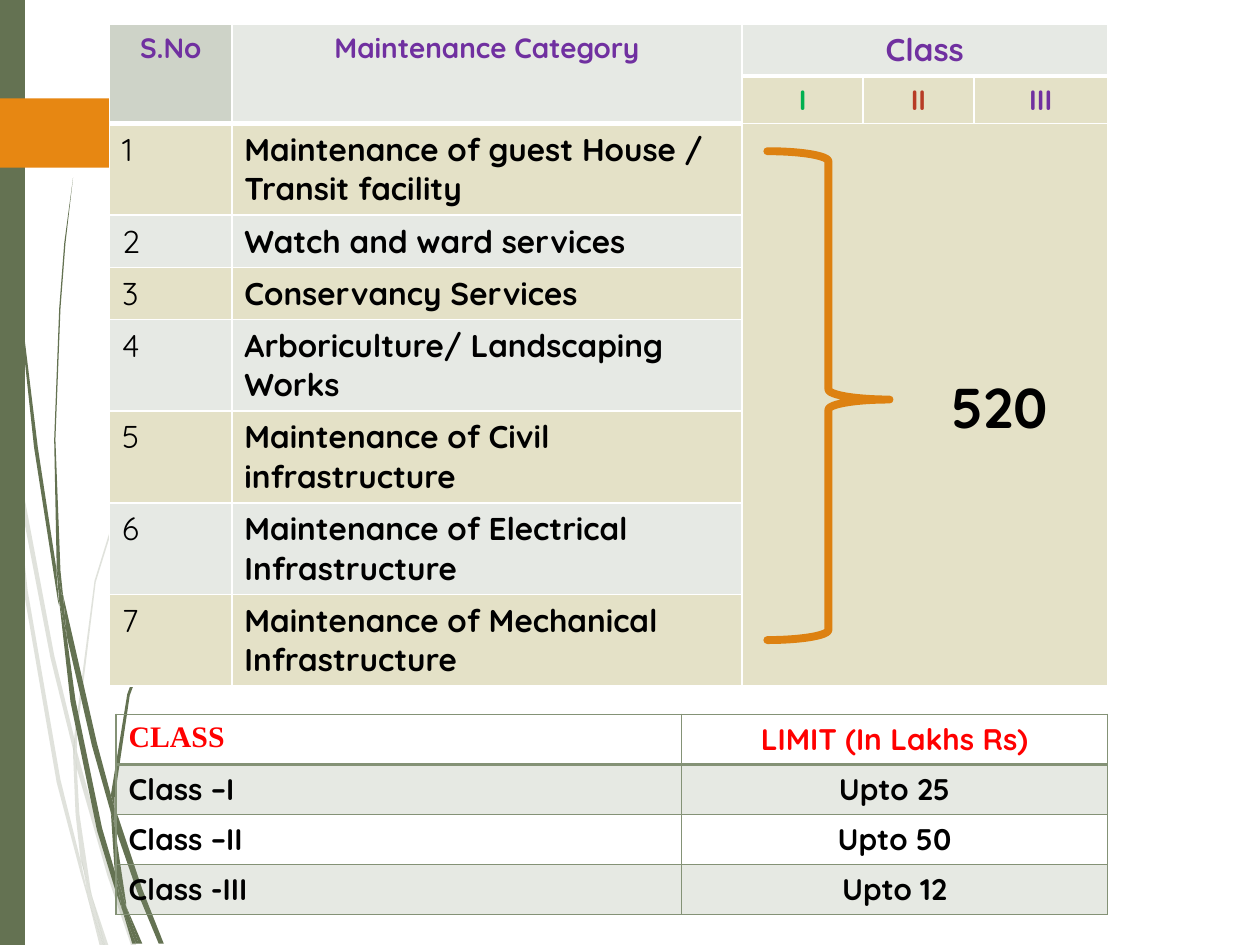
import pptx
import pptx.util
import pptx.dml.color
import pptx.enum.shapes
import pptx.enum.text
import pptx.oxml
import pptx.oxml.ns
from pptx.util import Inches

COLORS = {
    "olive": "647252", "orange": "E78712", "brace": "DD8111", "white": "FFFFFF",
    "header": "E6E9E4", "number": "CED3C8", "sand": "E4E1C7", "sage": "849276",
    "purple": "7030A0", "green": "00B050", "rust": "B73C26", "red": "FF0000",
    "black": "000000",
}
FONT = "Quicksand"
CENTER = pptx.enum.text.PP_ALIGN.CENTER
LEFT = pptx.enum.text.PP_ALIGN.LEFT

# Outlines of the grass blades, in inches from the corner of their box
PALE_BLADES = [
    [(0.08, 3.5), (0.06, 3.22), (0, 2.82), (0, 2.99), (0.07, 3.44)],
    [(0.4, 5.22), (0.59, 5.99), (0.59, 5.86), (0.43, 5.2), (0.1, 3.45), (0.12, 3.76)],
    [(0.64, 6.07), (0.61, 5.96), (0.61, 6.1), (0.85, 6.94), (1.04, 7.5), (1.08, 7.5),
     (0.88, 6.92)],
    [(0.83, 7.5), (0.86, 7.5), (0.73, 7.11)],
    [(0.64, 6.83), (0.48, 6.19), (0.22, 4.69), (0.12, 3.76), (0.08, 3.5), (0.19, 4.7),
     (0.45, 6.21), (0.64, 6.93), (0.7, 7.14), (0.69, 7.07)],
    [(0.58, 5.99), (0.6, 6.46), (0.64, 6.83), (0.67, 6.92), (0.73, 7.11), (0.72, 7.06),
     (0.63, 6.46), (0.61, 6.1), (0.61, 6.08)],
    [(0.61, 5.84), (0.76, 4.62), (1.11, 3.49), (1.59, 2.45), (1.87, 1.98), (2.01, 1.75),
     (2.17, 1.54), (2.17, 1.53), (2.01, 1.75), (1.86, 1.97), (1.58, 2.44), (1.1, 3.48),
     (0.75, 4.61), (0.59, 5.84), (0.59, 5.86), (0.61, 5.96)],
    [(0.7, 7.14), (0.79, 7.5), (0.82, 7.5)],
    [(0.61, 6.08), (0.61, 6.1), (0.61, 5.96), (0.59, 5.86), (0.58, 5.99)],
    [(0.67, 6.92), (0.65, 6.83), (0.69, 7.07), (0.7, 7.14), (0.82, 7.5), (0.83, 7.5),
     (0.73, 7.11)],
]
DARK_BLADES = [
    [(0.05, 1.1), (0.14, 2.33), (0.27, 3.55), (0.46, 4.77), (0.47, 4.81), (0.45, 4.57),
     (0.45, 4.53), (0.3, 3.55), (0.15, 2.32), (0.06, 1.09), (0.04, 0.48), (0.03, 0),
     (0.02, 0), (0.03, 0.48)],
    [(0.73, 5.92), (0.88, 6.45), (0.88, 6.33), (0.88, 6.31), (0.77, 5.9), (0.5, 4.72),
     (0.53, 5.05)],
    [(0.94, 6.49), (0.91, 6.41), (0.91, 6.56), (1.09, 7.08), (1.26, 7.49), (1.3, 7.49),
     (1.13, 7.06)],
    [(0.91, 6.91), (0.81, 6.57), (0.6, 5.56), (0.53, 5.05), (0.47, 4.77), (0.56, 5.57),
     (0.77, 6.59), (0.92, 7.08), (0.97, 7.22), (0.96, 7.17)],
    [(0.5, 4.72), (0.48, 4.53), (0.44, 3.49), (0.48, 2.45), (0.52, 1.93), (0.58, 1.41),
     (0.51, 1.93), (0.47, 2.45), (0.43, 3.49), (0.45, 4.49), (0.49, 4.72)],
    [(1.1, 7.49), (1.13, 7.49), (1, 7.19)],
    [(0.47, 4.77), (0.53, 5.05), (0.5, 4.72), (0.49, 4.72), (0.45, 4.49), (0.45, 4.53)],
    [(0.91, 6.33), (1.03, 5.52), (1.31, 4.76), (1.69, 4.06), (1.91, 3.74), (2.03, 3.59),
     (2.16, 3.44), (2.15, 3.44), (2.03, 3.58), (1.91, 3.73), (1.68, 4.05), (1.29, 4.74),
     (1.01, 5.51), (0.88, 6.31), (0.91, 6.41)],
    [(0.97, 7.22), (1.05, 7.49), (1.08, 7.49)],
    [(0.88, 6.45), (0.91, 6.91), (0.96, 7.06), (1, 7.19), (1, 7.16), (0.91, 6.56),
     (0.9, 6.51)],
    [(0.88, 6.45), (0.9, 6.51), (0.91, 6.56), (0.91, 6.41), (0.88, 6.31)],
    [(0.96, 7.06), (0.91, 6.91), (0.96, 7.17), (0.97, 7.22), (1.08, 7.49), (1.1, 7.49),
     (1, 7.19)],
]
ARROW = [(0, 0), (1.21, 0), (1.24, 0.01), (1.49, 0.26), (1.49, 0.29), (1.24, 0.54),
         (1.21, 0.55), (0, 0.55)]

CATEGORIES = [
    "Maintenance of guest House / Transit facility", "Watch and ward services",
    "Conservancy Services", "Arboriculture/ Landscaping Works",
    "Maintenance of Civil infrastructure", "Maintenance of Electrical Infrastructure",
    "Maintenance of Mechanical Infrastructure",
]
LIMITS = [("Class –I", "Upto 25"), ("Class –II", "Upto 50"), ("Class -III", "Upto 12")]


def rgb(name):
    return pptx.dml.color.RGBColor.from_string(COLORS[name])


def paint(item, name, alpha=None):
    """Fill a shape or cell, with an optional opacity in percent."""
    item.fill.solid()
    item.fill.fore_color.rgb = rgb(name)
    if alpha:
        holder = item._tc if hasattr(item, "_tc") else item.element.spPr
        color = holder.find(".//" + pptx.oxml.ns.qn("a:solidFill") + "[last()]/*") \
            if not hasattr(item, "_tc") else holder.tcPr.find(
                pptx.oxml.ns.qn("a:solidFill") + "/*")
        color.append(pptx.oxml.parse_xml(
            f'<a:alpha {pptx.oxml.ns.nsdecls("a")} val="{alpha * 1000}"/>'))


def write(frame, text, size, color, align=LEFT, bold=True, font=FONT):
    para = frame.paragraphs[0]
    para.text, para.alignment = text, align
    para.font.name, para.font.size, para.font.bold = font, pptx.util.Pt(size), bold
    para.font.color.rgb = rgb(color)


def add_outline(shapes, left, top, points, color, alpha=None):
    spots = [(Inches(left + x), Inches(top + y)) for x, y in points]
    builder = shapes.build_freeform(*spots[0])
    builder.add_line_segments(spots[1:], close=True)
    shape = builder.convert_to_shape()
    shape.shadow.inherit = False
    paint(shape, color, alpha)
    shape.line.fill.background()


def set_borders(cell, color, top=1, bottom=1):
    properties = cell._tc.get_or_add_tcPr()
    for side, width in (("L", 1), ("R", 1), ("T", top), ("B", bottom)):
        properties.append(pptx.oxml.parse_xml(
            f'<a:ln{side} {pptx.oxml.ns.nsdecls("a")} w="{width * 12700}"><a:solidFill>'
            f'<a:srgbClr val="{COLORS[color]}"/></a:solidFill></a:ln{side}>'))


def add_grid(page, left, top, width, height, columns, rows):
    frame = page.shapes.add_table(len(rows), len(columns), Inches(left), Inches(top),
                                  Inches(width), Inches(height))
    table = frame.table
    table.first_row = table.horz_banding = False
    for column, size in zip(table.columns, columns):
        column.width = Inches(size)
    for row, size in zip(table.rows, rows):
        row.height = Inches(size)
    frame.height = Inches(height)
    return table


def add_decoration(page, left, top, height):
    for blades, alpha in ((PALE_BLADES, 20), (DARK_BLADES, None)):
        group = page.shapes.add_group_shape()
        for blade in blades:
            add_outline(group.shapes, left, top, blade, "olive", alpha)
    add_outline(page.shapes, left, top,
                [(0, 0), (0.2, 0), (0.2, height), (0, height)], "olive")
    add_outline(page.shapes, left, top + 0.78, ARROW, "orange")


def add_category_table(page, left, top, width, height):
    table = add_grid(page, left, top, width, height, [0.97, 4.05, 0.96, 0.88, 1.06],
                     [0.37, 0.34, 0.58, 0.34, 0.34, 0.57, 0.57, 0.58, 0.58])
    for first, last in (((0, 0), (1, 0)), ((0, 1), (1, 1)), ((0, 2), (0, 4)),
                        ((2, 2), (8, 4))):
        table.cell(*first).merge(table.cell(*last))
    for row in range(9):
        for column in range(5):
            cell = table.cell(row, column)
            # The heavy rule runs below each heading cell
            heading_end = 1 if column < 2 else 0
            set_borders(cell, "white", 3 if row == heading_end + 1 else 1,
                        3 if row in (0, heading_end) else 1)
            shaded = row % 2 == 0 or column > 1
            paint(cell, "header" if row == 0 or not shaded else "sand")
    paint(table.cell(0, 0), "number")

    # Headings
    for row, column, text, size, color in (
            (0, 0, "S.No", 16, "purple"), (0, 1, "Maintenance Category", 16, "purple"),
            (0, 2, "Class", 18, "purple"), (1, 2, "I", 16, "green"),
            (1, 3, "II", 16, "rust"), (1, 4, "III", 16, "purple")):
        write(table.cell(row, column).text_frame, text, size, color, CENTER)
    # Numbered categories
    for number, category in enumerate(CATEGORIES, 1):
        write(table.cell(number + 1, 0).text_frame, str(number), 18, "black", bold=False)
        write(table.cell(number + 1, 1).text_frame, category, 18, "black")


def add_limit_table(page, left, top, width, height):
    rows = [("CLASS", "LIMIT (In Lakhs Rs)")] + LIMITS
    table = add_grid(page, left, top, width, height, [4.49, 3.38], [0.32] * 4)
    for row, texts in enumerate(rows):
        for column, text in enumerate(texts):
            cell = table.cell(row, column)
            set_borders(cell, "sage", 2 if row == 1 else 1, 2 if row == 0 else 1)
            if row % 2:
                paint(cell, "sage", 20)
            else:
                cell.fill.background()
            write(cell.text_frame, text, 17, "black" if row else "red",
                  CENTER if column else LEFT,
                  font="Times New Roman" if row == column == 0 else FONT)


def add_total(page, left, top):
    brace = page.shapes.add_shape(pptx.enum.shapes.MSO_SHAPE.RIGHT_BRACE, Inches(left),
                                  Inches(top), Inches(0.97), Inches(3.88))
    brace.adjustments[0], brace.adjustments[1] = 0.083, 0.508
    brace.shadow.inherit = False
    brace.fill.background()
    brace.line.color.rgb = rgb("brace")
    brace.line.width = pptx.util.Pt(4.5)
    brace.element.spPr.find(pptx.oxml.ns.qn("a:ln")).set("cap", "rnd")
    box = page.shapes.add_textbox(Inches(left + 1.36), Inches(top + 1.71),
                                  Inches(1.12), Inches(0.64))
    box.text_frame.word_wrap = True
    box.text_frame.auto_size = pptx.enum.text.MSO_AUTO_SIZE.SHAPE_TO_FIT_TEXT
    write(box.text_frame, "520", 32, "black")


def main():
    deck = pptx.Presentation()
    deck.slide_width, deck.slide_height = Inches(10), Inches(7.5)
    page = deck.slides.add_slide(deck.slide_layouts[6])
    add_decoration(page, 0, 0, 7.5)
    add_category_table(page, 0.87, 0.19, 7.92, 5.07)
    add_limit_table(page, 0.92, 5.67, 7.87, 1.53)
    add_total(page, 6.09, 1.2)
    deck.save("out.pptx")


if __name__ == "__main__":
    main()
